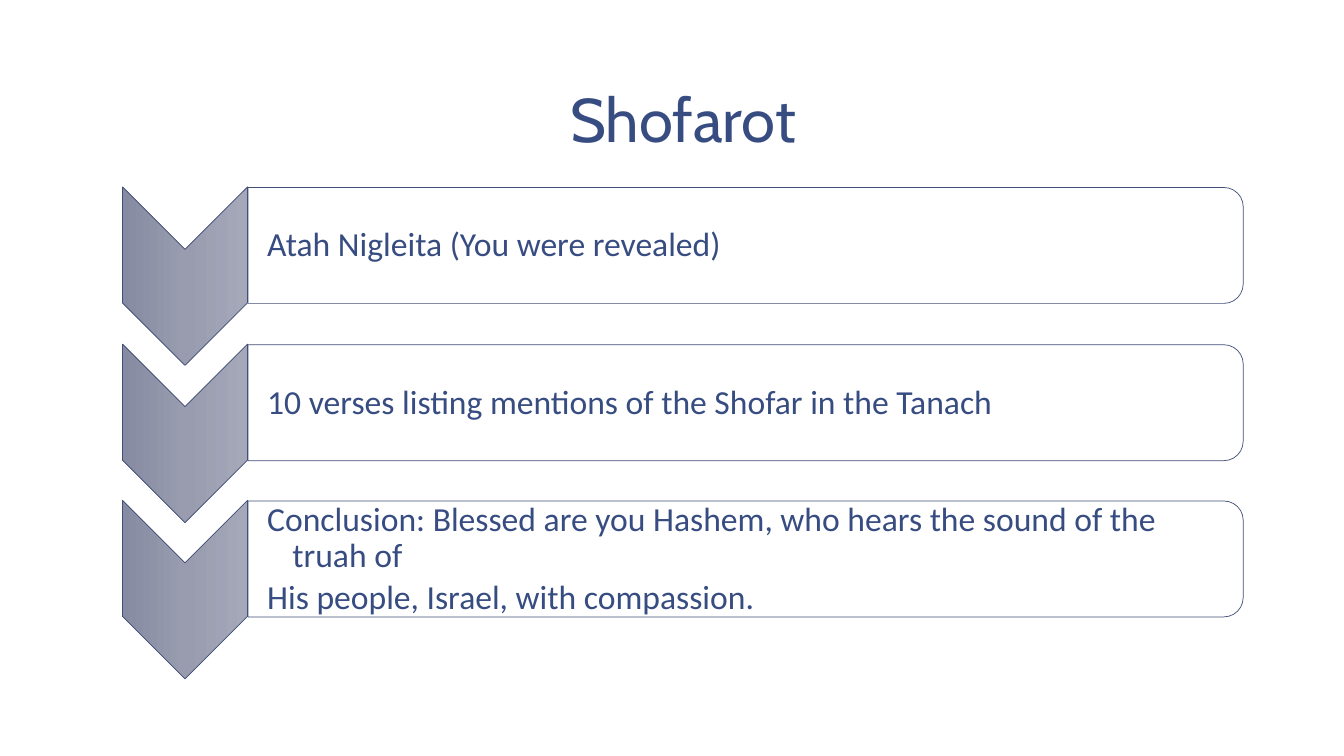
from copy import deepcopy
from dataclasses import dataclass

from lxml.etree import SubElement
from pptx import Presentation
from pptx.dml.color import RGBColor
from pptx.enum.shapes import MSO_SHAPE
from pptx.enum.text import MSO_ANCHOR, PP_ALIGN
from pptx.oxml.ns import qn
from pptx.util import Emu, Pt


@dataclass(frozen=True)
class Theme:
    ink: str = "374C81"
    outline: str = "414E77"
    panel: str = "FFFFFF"
    chevron: tuple = (("A4A8B9", 0), ("989CAE", 0.5), ("868BA2", 1))
    title_font: str = "Cabin"
    body_font: str = "Calibri"
    title_size: int = 44
    body_size: int = 24


STEPS = [
    ["Atah Nigleita (You were revealed)"],
    ["10 verses listing mentions of the Shofar in the Tanach"],
    [
        "Conclusion: Blessed are you Hashem, who hears the sound of the truah of",
        "His people, Israel, with compassion.",
    ],
]
FIRST_TOP = 186
STEP_PITCH = 155.5


def px(count):
    return Emu(count * 9144)


def set_values(target, values):
    for name, value in values.items():
        setattr(target, name, value)


class SlideBuilder:
    def __init__(self, deck, theme):
        self.theme = theme
        self.page = deck.slides.add_slide(deck.slide_layouts[5])

    def fill_text(self, frame, lines, insets, anchor, font, paragraph):
        margins = ("margin_left", "margin_top", "margin_right", "margin_bottom")
        set_values(frame, dict(zip(margins, map(px, insets))))
        set_values(frame, {"word_wrap": True, "vertical_anchor": anchor})
        for index, line in enumerate(lines):
            para = frame.paragraphs[0] if index == 0 else frame.add_paragraph()
            set_values(para, paragraph)
            span = para.add_run()
            span.text = line
            set_values(span.font, font)
            span.font.color.rgb = RGBColor.from_string(self.theme.ink)

    def title(self, text, left, top, width, height):
        box = self.page.shapes.title
        set_values(box, {"left": px(left), "top": px(top), "width": px(width), "height": px(height)})
        self.fill_text(
            box.text_frame, [text], (13, 7, 13, 7), MSO_ANCHOR.BOTTOM,
            {"name": self.theme.title_font, "size": Pt(self.theme.title_size)},
            {"alignment": PP_ALIGN.CENTER, "line_spacing": 0.85},
        )

    def turned_shape(self, kind, left, top, width, height):
        offset = (width - height) / 2
        shape = self.page.shapes.add_shape(
            kind, px(int(left + offset)), px(int(top - offset)), px(height), px(width)
        )
        shape.rotation = 90
        shape.shadow.inherit = False
        shape.line.color.rgb = RGBColor.from_string(self.theme.outline)
        shape.line.width = Pt(0.5)
        return shape

    def chevron(self, left, top, width, height):
        shape = self.turned_shape(MSO_SHAPE.CHEVRON, left, top, width, height)
        shape.fill.gradient()
        shape.fill.gradient_angle = 270
        stops = shape._element.spPr.find(qn("a:gradFill")).find(qn("a:gsLst"))
        stops.append(deepcopy(stops[0]))
        for stop, (color, position) in zip(shape.fill.gradient_stops, self.theme.chevron):
            stop.color.rgb = RGBColor.from_string(color)
            stop.position = position

    def panel(self, left, top, width, height):
        shape = self.turned_shape(MSO_SHAPE.ROUND_2_SAME_RECTANGLE, left, top, width, height)
        shape.fill.solid()
        shape.fill.fore_color.rgb = RGBColor.from_string(self.theme.panel)
        color = shape._element.spPr.find(qn("a:solidFill"))[0]
        SubElement(color, qn("a:alpha")).set("val", "90000")

    def body(self, lines, left, top, width, height):
        box = self.page.shapes.add_textbox(px(left), px(top), px(width), px(height))
        self.fill_text(
            box.text_frame, lines, (19, 2, 2, 2), MSO_ANCHOR.MIDDLE,
            {"name": self.theme.body_font, "size": Pt(self.theme.body_size)},
            {"level": 1, "line_spacing": 0.9, "space_after": Pt(3.6)},
        )
        for para in box.text_frame.paragraphs:
            properties = para._p.get_or_add_pPr()
            properties.set("marL", str(px(25)))
            properties.set("indent", str(px(-25)))

    def step(self, lines, top):
        self.chevron(122, top, 124, 177)
        self.panel(246, top, 987, 115)
        self.body(lines, 246, top + 6, 981, 104)


def main():
    deck = Presentation()
    set_values(deck, {"slide_width": px(1333), "slide_height": px(750)})
    builder = SlideBuilder(deck, Theme())
    builder.title("Shofarot", 122, 8, 1111, 153)
    for index, lines in enumerate(STEPS):
        builder.step(lines, round(FIRST_TOP + index * STEP_PITCH))
    deck.save("out.pptx")


if __name__ == "__main__":
    main()
